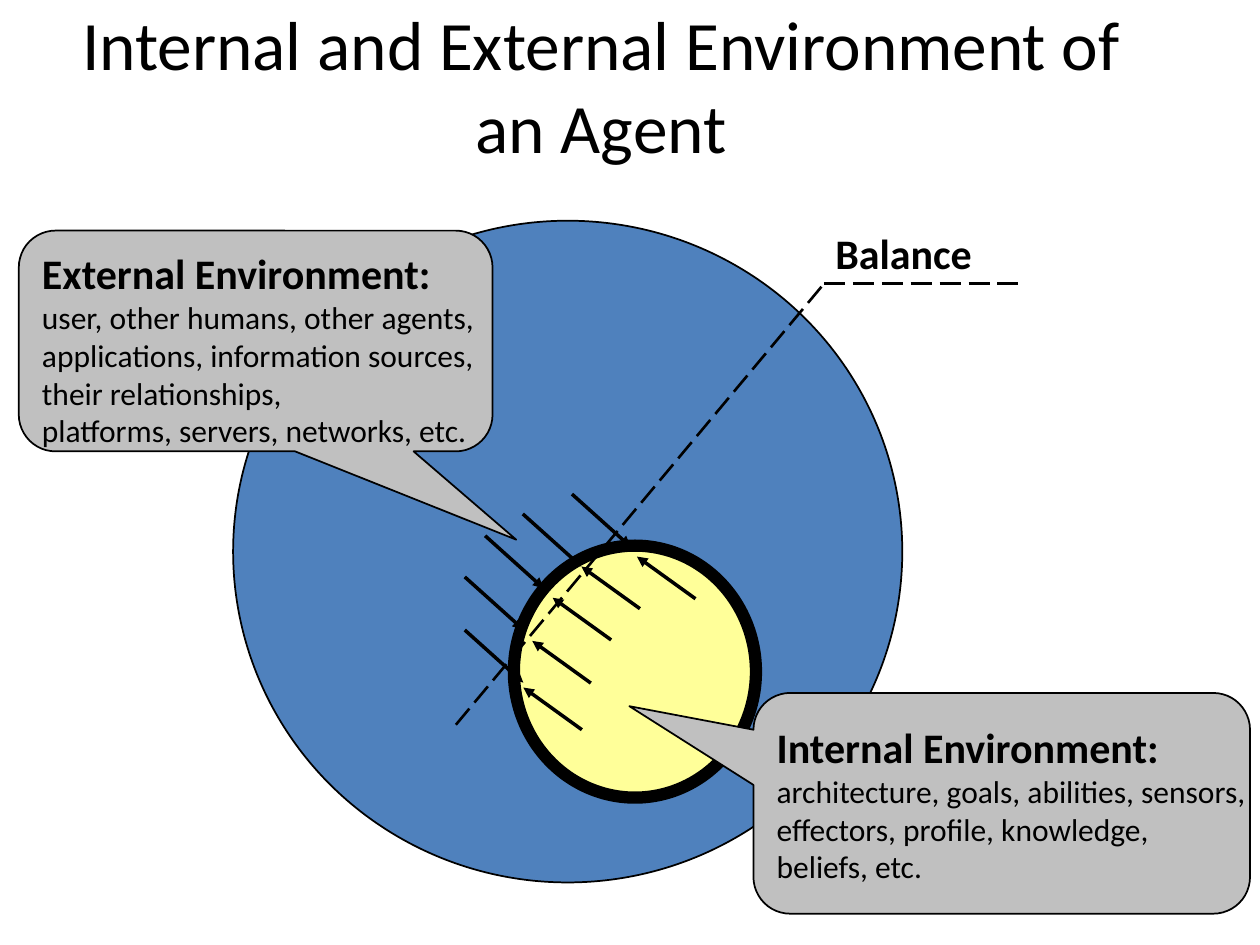
from dataclasses import dataclass

from lxml.etree import SubElement as Sub
from pptx import Presentation
from pptx.dml.color import RGBColor as Rgb
from pptx.enum.dml import MSO_LINE as Dash
from pptx.enum.shapes import MSO_CONNECTOR as Link, MSO_SHAPE as Kind
from pptx.enum.text import MSO_ANCHOR as Anchor, MSO_AUTO_SIZE as Fit, PP_ALIGN as Align
from pptx.oxml.ns import qn
from pptx.util import Cm, Pt

FONT = "Calibri"
HUES = {"ink": "000000", "outer": "4F81BD", "inner": "FFFF99", "note": "C0C0C0"}
Pair = tuple[float, float]
Box = tuple[float, float, float, float]


@dataclass
class Disc:
    box: Box
    hue: str
    width: float


@dataclass
class Note:
    box: Box
    tip: Pair
    anchor: Anchor
    head: str
    lines: list[str]


@dataclass
class Flow:
    step: Pair
    starts: list[Pair]


DISCS = [
    Disc((4.7, 4.45, 13.49, 13.34), "outer", 1),
    Disc((10.36, 11, 4.88, 5.08), "inner", 7),
]
NOTES = [
    Note((15.19, 13.97, 10.01, 4.45), (-0.75, -0.44), Anchor.MIDDLE,
         "Internal Environment:",
         ["architecture, goals, abilities, sensors,",
          "effectors, profile, knowledge,",
          "beliefs, etc."]),
    Note((0.38, 4.65, 9.55, 4.45), (0.55, 0.9), Anchor.TOP,
         "External Environment:",
         ["user, other humans, other agents,",
          "applications, information sources,",
          "their relationships,",
          "platforms, servers, networks, etc."]),
]
FLOWS = [
    Flow((1.18, 1.06),
         [(9.37, 11.63), (9.78, 10.8), (10.54, 10.36), (11.53, 9.96), (9.37, 12.7)]),
    Flow((-1.18, -0.85),
         [(11.73, 14.71), (11.91, 13.77), (12.32, 12.9), (12.9, 12.27), (14.02, 12.07)]),
]
BEND = [(9.19, 14.61), (16.61, 5.72), (20.52, 5.72)]


def hue(name: str) -> Rgb:
    return Rgb.from_string(HUES[name])


def style(para, size: float, bold: bool = False, align: Align = Align.LEFT) -> None:
    para.alignment = align
    font = para.font
    font.name, font.size, font.bold = FONT, Pt(size), bold
    font.color.rgb = hue("ink")


def draw_shape(slide, kind: Kind, box: Box, fill: str, width: float):
    shape = slide.shapes.add_shape(kind, *map(Cm, box))
    shape.shadow.inherit = False
    shape.fill.solid()
    shape.fill.fore_color.rgb = hue(fill)
    shape.line.color.rgb = hue("ink")
    shape.line.width = Pt(width)
    return shape


def draw_note(slide, note: Note) -> None:
    shape = draw_shape(slide, Kind.ROUNDED_RECTANGULAR_CALLOUT, note.box, "note", 1)
    shape.adjustments[0], shape.adjustments[1] = note.tip
    frame = shape.text_frame
    frame.word_wrap = False
    frame.vertical_anchor = note.anchor
    frame.text = "\n".join([note.head, *note.lines])
    head, *rest = frame.paragraphs
    style(head, 24, True)
    for para in rest:
        style(para, 18)


def draw_line(slide, start: Pair, end: Pair, width: float):
    link = slide.shapes.add_connector(Link.STRAIGHT, *map(Cm, start + end))
    link.line.color.rgb = hue("ink")
    link.line.width = Pt(width)
    return link


def clear_shade(link) -> None:
    Sub(link._element.spPr, qn("a:effectLst"))


def draw_flow(slide, flow: Flow) -> None:
    dx, dy = flow.step
    for x, y in flow.starts:
        link = draw_line(slide, (x, y), (x + dx, y + dy), 2)
        Sub(link.line._get_or_add_ln(), qn("a:tailEnd"), type="triangle")
        clear_shade(link)


def draw_bend(slide, points: list[Pair]) -> None:
    for start, end in zip(points, points[1:]):
        link = draw_line(slide, start, end, 1.5)
        link.line.dash_style = Dash.LONG_DASH
        clear_shade(link)


def draw_title(slide, text: str, box: Box) -> None:
    title = slide.shapes.title
    title.left, title.top, title.width, title.height = map(Cm, box)
    frame = title.text_frame
    frame.text = text
    frame.auto_size = Fit.NONE
    frame.vertical_anchor = Anchor.MIDDLE
    style(frame.paragraphs[0], 39.6, align=Align.CENTER)


def draw_label(slide, text: str, box: Box) -> None:
    frame = slide.shapes.add_textbox(*map(Cm, box)).text_frame
    frame.word_wrap = True
    frame.auto_size = Fit.SHAPE_TO_FIT_TEXT
    frame.text = text
    style(frame.paragraphs[0], 24, True)


def main() -> None:
    deck = Presentation()
    deck.slide_width, deck.slide_height = Cm(25.4), Cm(19.05)
    slide = deck.slides.add_slide(deck.slide_layouts.get_by_name("Title Only"))
    draw_title(slide, "Internal and External Environment of an Agent",
               (1.17, 0.64, 21.9, 2.11))
    for disc in DISCS:
        draw_shape(slide, Kind.OVAL, disc.box, disc.hue, disc.width)
    for note in NOTES:
        draw_note(slide, note)
    for flow in FLOWS:
        draw_flow(slide, flow)
    draw_bend(slide, BEND)
    draw_label(slide, "Balance", (16.59, 4.47, 4.5, 1.27))
    deck.save("out.pptx")


if __name__ == "__main__":
    main()
